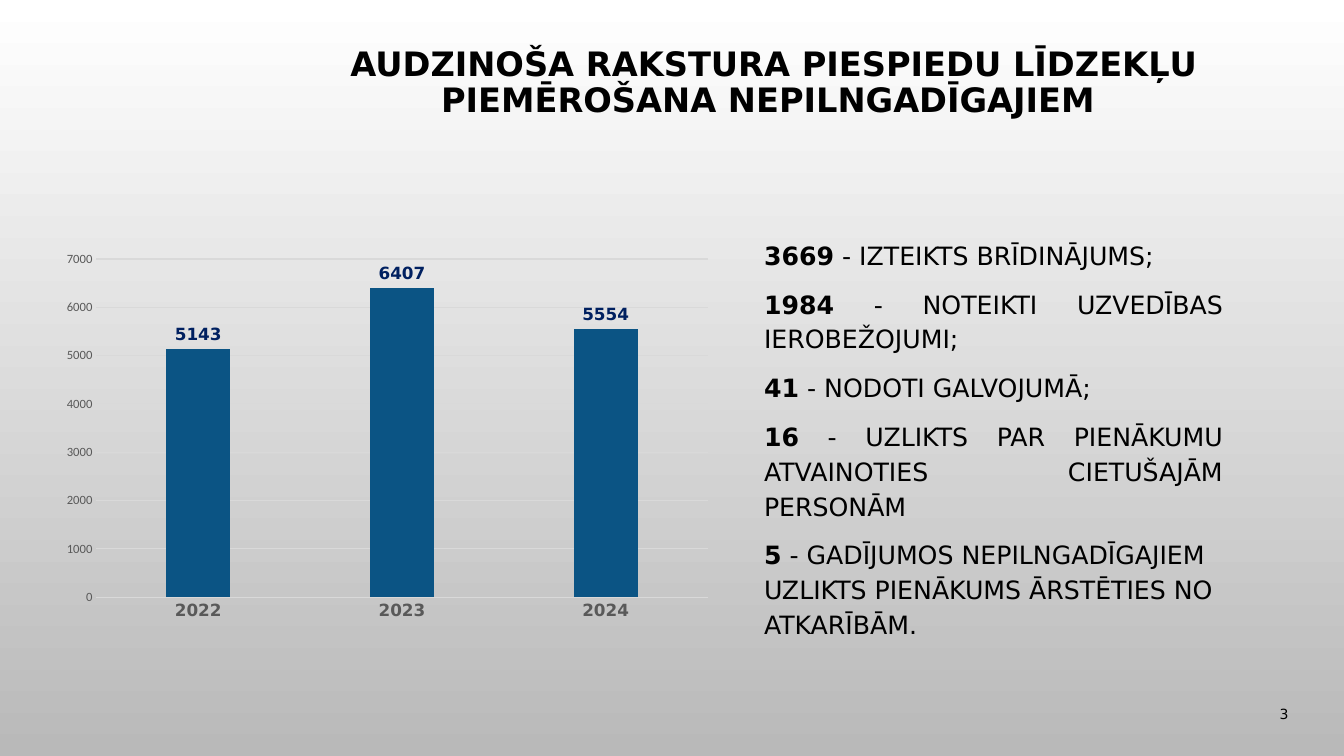
from typing import NamedTuple

from pptx import Presentation
from pptx.chart.data import CategoryChartData
from pptx.dml.color import RGBColor
from pptx.enum.chart import XL_CHART_TYPE, XL_LABEL_POSITION, XL_TICK_MARK
from pptx.enum.text import MSO_ANCHOR, MSO_AUTO_SIZE, PP_ALIGN
from pptx.util import Inches, Pt

SLIDE_WIDTH, SLIDE_HEIGHT = Inches(13.33), Inches(7.5)
TEXT_FONT, CHART_FONT = "DejaVu Sans", "Calibri"
BLACK, GREY, LIGHT_GREY = "000000", "595959", "D9D9D9"
NAVY, BAR_BLUE = "002060", "0B5484"


class Area(NamedTuple):
    """Place on the slide, in percent of its width and height."""
    left: float
    top: float
    width: float
    height: float

    def lengths(self) -> tuple[int, int, int, int]:
        return (int(SLIDE_WIDTH * self.left / 100), int(SLIDE_HEIGHT * self.top / 100),
                int(SLIDE_WIDTH * self.width / 100), int(SLIDE_HEIGHT * self.height / 100))


class Measure(NamedTuple):
    count: str
    description: str
    align: PP_ALIGN = PP_ALIGN.JUSTIFY


TITLE_AREA = Area(18.45, 5.6, 78.24, 15.07)
CHART_AREA = Area(3.98, 32.27, 49.66, 50.93)
MEASURES_AREA = Area(56.11, 30.53, 35.63, 52.67)
NUMBER_AREA = Area(93.32, 92.27, 3.3, 4.4)

TITLE = "AUDZINOŠA RAKSTURA PIESPIEDU LĪDZEKĻU PIEMĒROŠANA NEPILNGADĪGAJIEM "
MEASURES = [
    Measure("3669", "IZTEIKTS BRĪDINĀJUMS;"),
    Measure("1984", "NOTEIKTI UZVEDĪBAS IEROBEŽOJUMI;"),
    Measure("41", "NODOTI GALVOJUMĀ;"),
    Measure("16", "UZLIKTS PAR PIENĀKUMU ATVAINOTIES CIETUŠAJĀM PERSONĀM"),
    Measure("5", "GADĪJUMOS NEPILNGADĪGAJIEM UZLIKTS PIENĀKUMS ĀRSTĒTIES NO ATKARĪBĀM.",
            PP_ALIGN.LEFT),
]
CASES_BY_YEAR = {"2022": 5143, "2023": 6407, "2024": 5554}


def color(value: str) -> RGBColor:
    return RGBColor.from_string(value)


def format_font(font, size: float, *, name: str = TEXT_FONT, fill: str = BLACK,
                bold: bool = False) -> None:
    font.name, font.size, font.bold = name, Pt(size), bold
    font.color.rgb = color(fill)


def add_text(paragraph, text: str, *, size: float, bold: bool = False,
             align: PP_ALIGN = PP_ALIGN.LEFT, line_spacing: float = 1.0,
             space_before: float = 0) -> None:
    paragraph.alignment = align
    paragraph.line_spacing = line_spacing
    paragraph.space_before = Pt(space_before)
    run = paragraph.add_run()
    run.text = text
    format_font(run.font, size, bold=bold)


def prepare_frame(shape, anchor: MSO_ANCHOR = MSO_ANCHOR.TOP):
    frame = shape.text_frame
    frame.word_wrap = True
    frame.auto_size = MSO_AUTO_SIZE.NONE
    frame.vertical_anchor = anchor
    return frame


def set_background(slide) -> None:
    fill = slide.background.fill
    fill.gradient()
    fill.gradient_angle = 270
    for stop, value in zip(fill.gradient_stops, ("FFFFFF", "B9B9B9")):
        stop.color.rgb = color(value)


def add_title(slide) -> None:
    title = slide.shapes.title
    title.left, title.top, title.width, title.height = TITLE_AREA.lengths()
    add_text(prepare_frame(title).paragraphs[0], TITLE, size=24, bold=True,
             align=PP_ALIGN.CENTER, line_spacing=0.9)


def add_measures(slide) -> None:
    frame = prepare_frame(slide.shapes.add_textbox(*MEASURES_AREA.lengths()))
    for index, measure in enumerate(MEASURES):
        paragraph = frame.add_paragraph() if index else frame.paragraphs[0]
        for text, bold in ((measure.count, True), (f" - {measure.description}", False)):
            add_text(paragraph, text, size=18, bold=bold, align=measure.align,
                     line_spacing=1.15, space_before=10)


def add_slide_number(slide) -> None:
    box = slide.shapes.add_textbox(*NUMBER_AREA.lengths())
    frame = prepare_frame(box, MSO_ANCHOR.MIDDLE)
    add_text(frame.paragraphs[0], "3", size=10, align=PP_ALIGN.RIGHT)


def add_cases_chart(slide) -> None:
    data = CategoryChartData()
    data.categories = list(CASES_BY_YEAR)
    data.add_series("Series 1", list(CASES_BY_YEAR.values()))
    chart = slide.shapes.add_chart(
        XL_CHART_TYPE.COLUMN_CLUSTERED, *CHART_AREA.lengths(), data).chart
    chart.has_legend = chart.has_title = False
    format_font(chart.font, 10, name=CHART_FONT)

    # Bars and their labels
    plot = chart.plots[0]
    plot.vary_by_categories = False
    plot.gap_width, plot.overlap = 219, -27
    series = plot.series[0]
    series.format.fill.solid()
    series.format.fill.fore_color.rgb = color(BAR_BLUE)
    labels = series.data_labels
    labels.show_value = True
    labels.position = XL_LABEL_POSITION.OUTSIDE_END
    format_font(labels.font, 12, fill=NAVY, bold=True)

    # Axes and grid
    years, cases = chart.category_axis, chart.value_axis
    for axis in (years, cases):
        axis.major_tick_mark = axis.minor_tick_mark = XL_TICK_MARK.NONE
    format_font(years.tick_labels.font, 12, fill=GREY, bold=True)
    format_font(cases.tick_labels.font, 9, name=CHART_FONT, fill=GREY)
    cases.minimum_scale, cases.maximum_scale, cases.major_unit = 0, 7000, 1000
    cases.format.line.fill.background()
    for line in (years.format.line, cases.major_gridlines.format.line):
        line.color.rgb = color(LIGHT_GREY)
        line.width = Pt(0.75)


def main() -> None:
    presentation = Presentation()
    presentation.slide_width, presentation.slide_height = SLIDE_WIDTH, SLIDE_HEIGHT
    slide = presentation.slides.add_slide(presentation.slide_layouts[5])
    set_background(slide)
    add_title(slide)
    add_measures(slide)
    add_slide_number(slide)
    add_cases_chart(slide)
    presentation.save("out.pptx")


if __name__ == "__main__":
    main()
